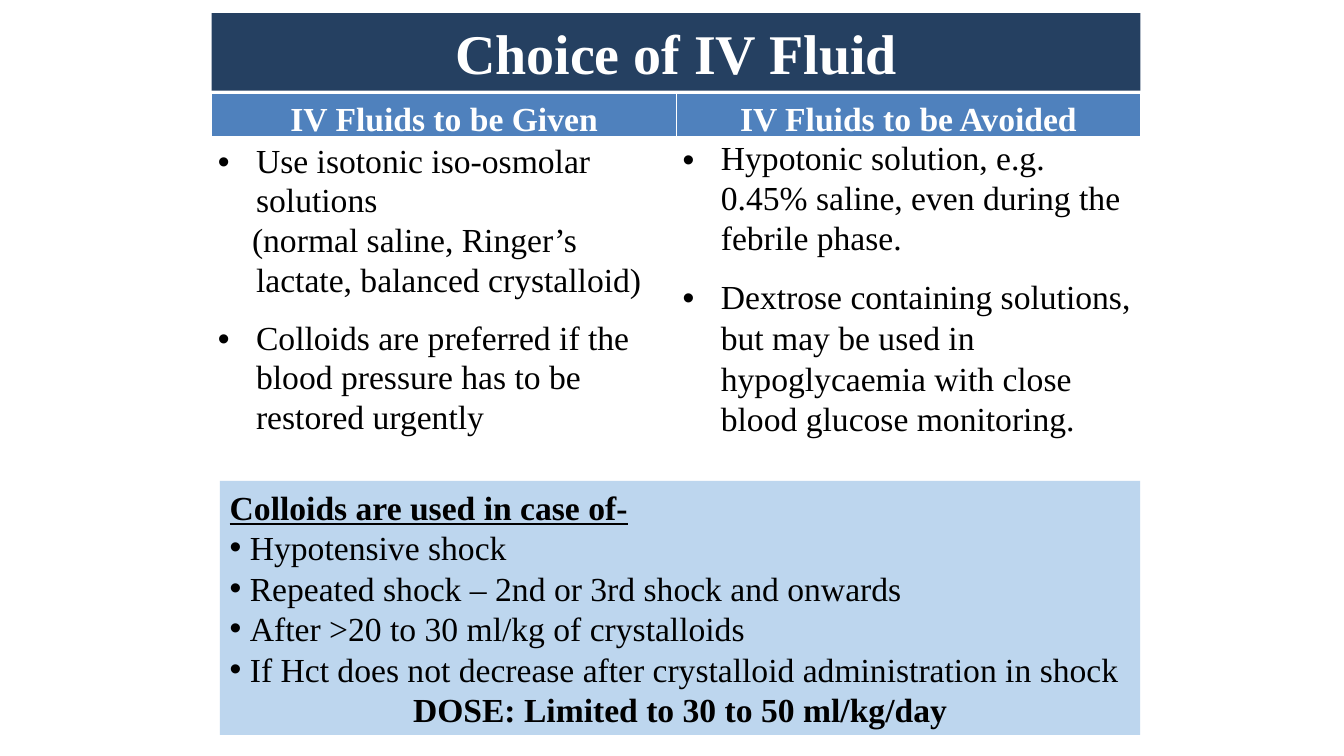
from dataclasses import dataclass

from lxml.etree import SubElement
from pptx import Presentation
from pptx.dml.color import RGBColor as Rgb
from pptx.enum.shapes import MSO_SHAPE as Shape
from pptx.enum.text import MSO_ANCHOR as Anchor, PP_ALIGN as Align
from pptx.oxml import parse_xml
from pptx.oxml.ns import nsdecls, qn
from pptx.util import Pt

PX = 9144  # EMU per px, 100 px to the inch


@dataclass(frozen=True)
class Theme:
    font: str = "Times New Roman"
    title_size: int = 40
    text_size: int = 24
    ink: str = "000000"
    paper: str = "FFFFFF"
    navy: str = "254061"
    blue: str = "4F81BD"
    pale_blue: str = "BDD6EE"


THEME = Theme()

HEADINGS = ["IV Fluids to be Given", "IV Fluids to be Avoided"]
# Each entry: text, bulleted, line spacing, space after in points
GIVEN = [
    ("Use isotonic iso-osmolar solutions", True, 1.07, 0),
    ("(normal saline, Ringer’s lactate, balanced crystalloid)", False, 1.07, 13),
    ("Colloids are preferred if the blood pressure has to be restored urgently",
     True, 1.07, 0),
]
AVOIDED = [
    ("Hypotonic solution, e.g. 0.45% saline, even during the febrile phase.",
     True, 1.07, 13),
    ("Dextrose containing solutions, but may be used in hypoglycaemia with "
     "close blood glucose monitoring.", True, 1.1, 0),
]
COLLOID_HEADING = "Colloids are used in case of-"
COLLOID_USES = [
    "Hypotensive shock",
    "Repeated shock – 2nd or 3rd shock and onwards",
    "After >20 to 30 ml/kg of crystalloids",
    "If Hct does not decrease after crystalloid administration in shock",
]
COLLOID_DOSE = "DOSE: Limited to 30 to 50 ml/kg/day"


def write(paragraph, text, color, size=THEME.text_size, bold=False,
          underline=False, align=Align.LEFT):
    paragraph.text = text
    paragraph.alignment = align
    font = paragraph.runs[0].font
    font.name, font.size = THEME.font, Pt(size)
    font.bold, font.underline = bold, underline
    font.color.rgb = Rgb.from_string(color)


def indent(paragraph, margin, first_line, bulleted=True):
    properties = paragraph._p.get_or_add_pPr()
    properties.set("marL", str(margin * PX))
    properties.set("indent", str(first_line * PX))
    if bulleted:
        SubElement(properties, qn("a:buFont")).set("typeface", "Arial")
        SubElement(properties, qn("a:buChar")).set("char", "•")


def paragraphs(frame, count):
    """Return the frame's first paragraph and as many new ones as needed."""
    return [frame.paragraphs[0]] + [frame.add_paragraph() for _ in range(count - 1)]


def add_panel(slide, left, top, width, height, fill):
    """Add a plain filled rectangle and return its text frame."""
    panel = slide.shapes.add_shape(
        Shape.RECTANGLE, left * PX, top * PX, width * PX, height * PX)
    panel.shadow.inherit = False
    panel.fill.solid()
    panel.fill.fore_color.rgb = Rgb.from_string(fill)
    panel.line.fill.background()
    frame = panel.text_frame
    frame.word_wrap = True
    frame.vertical_anchor = Anchor.MIDDLE
    return frame


def set_borders(cell, bottom=1):
    """Draw white borders, 1 pt wide except for the bottom one."""
    widths = {"lnL": 1, "lnR": 1, "lnT": 1, "lnB": bottom}
    for index, (side, width) in enumerate(widths.items()):
        cell._tc.get_or_add_tcPr().insert(index, parse_xml(
            f'<a:{side} {nsdecls("a")} w="{Pt(width)}"><a:solidFill>'
            f'<a:srgbClr val="{THEME.paper}"/></a:solidFill></a:{side}>'))


def set_margins(cell):
    cell.margin_left = cell.margin_right = 6 * PX
    cell.margin_top = cell.margin_bottom = 0


def fill_heading(cell, text):
    set_margins(cell)
    cell.fill.solid()
    cell.fill.fore_color.rgb = Rgb.from_string(THEME.blue)
    set_borders(cell, bottom=3)
    heading = cell.text_frame.paragraphs[0]
    write(heading, text, THEME.paper, bold=True, align=Align.CENTER)
    heading.line_spacing = 1.2
    heading.space_after = Pt(8)


def fill_advice(cell, advice):
    set_margins(cell)
    cell.vertical_anchor = Anchor.MIDDLE
    cell.fill.background()
    set_borders(cell)
    lines = paragraphs(cell.text_frame, len(advice))
    for line, (text, bulleted, spacing, after) in zip(lines, advice):
        write(line, text, THEME.ink)
        line.line_spacing = spacing
        line.space_after = Pt(after)
        indent(line, 38, -38 if bulleted else -4, bulleted)


def add_fluid_table(slide):
    fluids = slide.shapes.add_table(
        2, 2, 210 * PX, 93 * PX, 921 * PX, 335 * PX).table
    fluids.first_row = fluids.horz_banding = False
    for column, width in zip(fluids.columns, (461, 460)):
        column.width = width * PX
    for row, height in zip(fluids.rows, (39, 296)):
        row.height = height * PX
    for column, (heading, advice) in enumerate(zip(HEADINGS, (GIVEN, AVOIDED))):
        fill_heading(fluids.cell(0, column), heading)
        fill_advice(fluids.cell(1, column), advice)


def add_colloid_panel(slide):
    frame = add_panel(slide, 218, 477, 913, 252, THEME.pale_blue)
    heading, *uses, dose = paragraphs(frame, len(COLLOID_USES) + 2)
    for line in (heading, *uses, dose):
        line.line_spacing = Pt(28.9)
    write(heading, COLLOID_HEADING, THEME.ink, bold=True, underline=True)
    for use, text in zip(uses, COLLOID_USES):
        write(use, text, THEME.ink)
        indent(use, 20, -20)
    write(dose, COLLOID_DOSE, THEME.ink, bold=True, align=Align.CENTER)


def main():
    deck = Presentation()
    deck.slide_width, deck.slide_height = 1333 * PX, 750 * PX
    slide = deck.slides.add_slide(deck.slide_layouts[6])
    add_fluid_table(slide)
    title = add_panel(slide, 210, 13, 921, 77, THEME.navy)
    write(title.paragraphs[0], "Choice of IV Fluid", THEME.paper,
          THEME.title_size, bold=True, align=Align.CENTER)
    add_colloid_panel(slide)
    deck.save("out.pptx")


if __name__ == "__main__":
    main()
